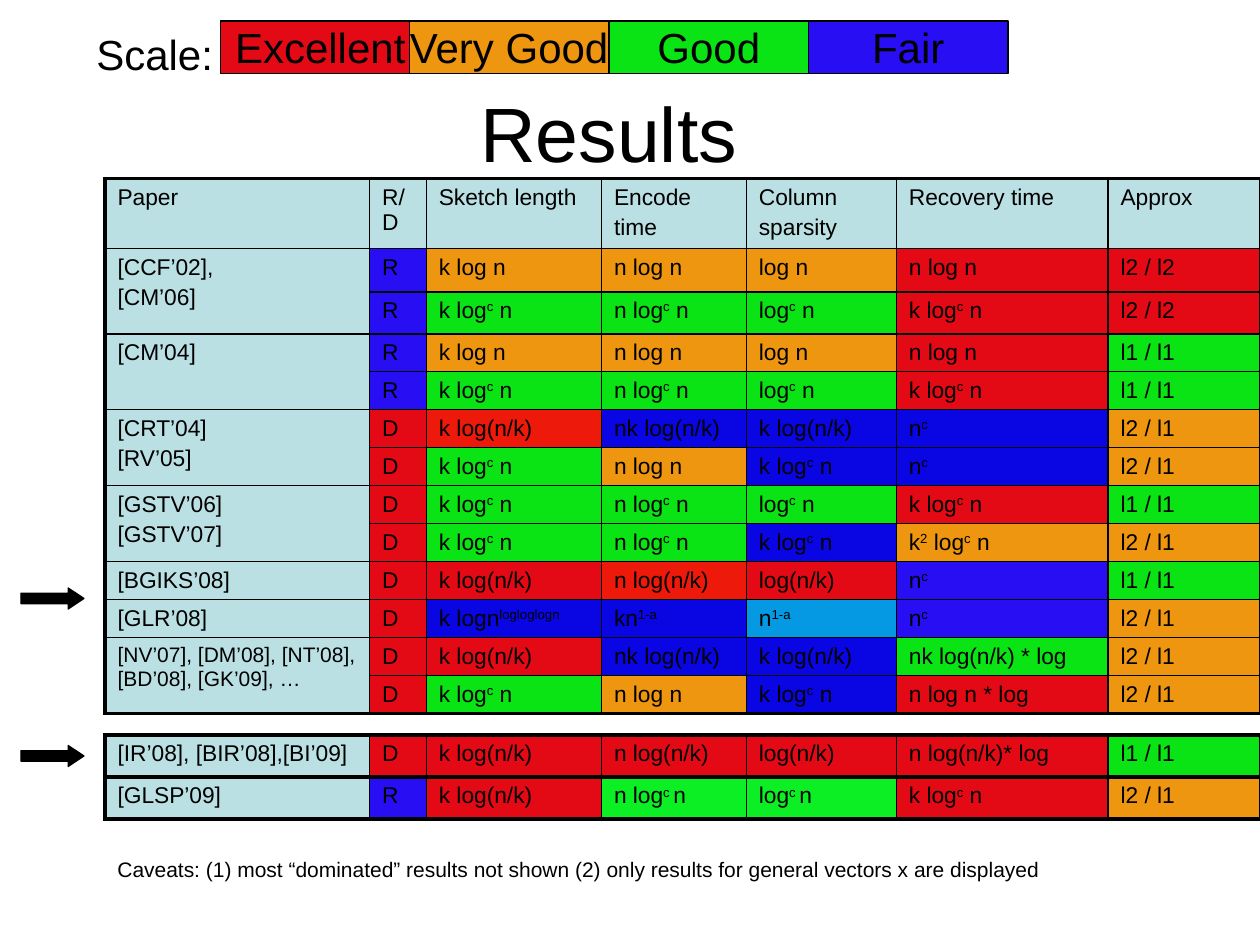
from lxml import etree
from pptx import Presentation
from pptx import util as u
from pptx.dml.color import RGBColor
from pptx.enum import shapes, text
from pptx.oxml import ns

Pt = u.Pt
COLORS = {
    "ink": "000000",
    "paper": "BBE0E3",
    "excellent": "E30A15",
    "scarlet": "ED190B",
    "very good": "EF9611",
    "good": "0AE314",
    "lime": "0BEF24",
    "fair": "280EF3",
    "navy": "0A06E3",
    "sky": "0699E3",
}
GRADES = {
    "P": "paper", "E": "excellent", "e": "scarlet", "V": "very good", "G": "good",
    "g": "lime", "F": "fair", "f": "navy", "s": "sky",
}
COLUMNS = [151.2, 32.4, 100.1, 82.8, 85.7, 121, 87.1]
KNOWN_HEIGHTS = [40, 24.8, 24] + [21.7] * 10
KNOWN_RESULTS = [
    ("PPPPPPP", "Paper|R/D|Sketch length|Encode\ntime|Column\nsparsity|Recovery time|Approx"),
    ("PFVVVEE", "[CCF’02],\n[CM’06]|R|k log n|n log n|log n|n log n|l2 / l2"),
    ("PFGGGEE", "|R|k log^c^ n|n log^c^ n|log^c^ n|k log^c^ n|l2 / l2"),
    ("PFVVVEG", "[CM’04]|R|k log n|n log n|log n|n log n|l1 / l1"),
    ("PFGGGEG", "|R|k log^c^ n|n log^c^ n|log^c^ n|k log^c^ n|l1 / l1"),
    ("PEefffV", "[CRT’04]\n[RV’05]|D|k log(n/k)|nk log(n/k)|k log(n/k)|n^c|l2 / l1"),
    ("PEGVffV", "|D|k log^c^ n|n log n|k log^c^ n|n^c|l2 / l1"),
    ("PEGGGEG", "[GSTV’06]\n[GSTV’07]|D|k log^c^ n|n log^c^ n|log^c^ n|k log^c^ n|l1 / l1"),
    ("PEGGfVV", "|D|k log^c^ n|n log^c^ n|k log^c^ n|k^2^ log^c^ n|l2 / l1"),
    ("PEEeEFG", "[BGIKS’08]|D|k log(n/k)|n log(n/k)|log(n/k)|n^c|l1 / l1"),
    ("PEffsFV", "[GLR’08]|D|k logn^logloglogn|kn^1-a|n^1-a|n^c|l2 / l1"),
    ("PEEffGV", "[NV’07], [DM’08], [NT’08], [BD’08], [GK’09], …|D|k log(n/k)|nk log(n/k)"
                "|k log(n/k)|nk log(n/k) * log|l2 / l1"),
    ("PEGVfEV", "|D|k log^c^ n|n log n|k log^c^ n|n log n * log|l2 / l1"),
]
SPARSE_RESULT = [
    ("PEEEEEG", "[IR’08], [BIR’08],[BI’09]|D|k log(n/k)|n log(n/k)|log(n/k)|n log(n/k)* log|l1 / l1"),
]
COMBINED_RESULT = [
    ("PFEggEV", "[GLSP’09]|R|k log(n/k)|n log^c ^n|log^c ^n|k log^c^ n|l2 / l1"),
]


def rgb(name):
    """Return the named colour."""
    return RGBColor.from_string(COLORS[name])


def write(paragraph, words, size, align=None):
    """Write words into a paragraph, raising the parts between carets."""
    for index, part in enumerate(words.split("^")):
        if part:
            run = paragraph.add_run()
            run.text = part
            if index % 2:
                run._r.get_or_add_rPr().set("baseline", "30000")
    if align is not None:
        paragraph.alignment = align
    for font in (paragraph.font, *(run.font for run in paragraph.runs)):
        font.name = "Arial"
        font.size = Pt(size)
        font.color.rgb = rgb("ink")


def add_border(cell, side, width):
    """Draw one edge of a table cell."""
    edge = etree.SubElement(cell._tc.get_or_add_tcPr(), ns.qn(f"a:ln{side}"), w=str(Pt(width)))
    fill = etree.SubElement(edge, ns.qn("a:solidFill"))
    etree.SubElement(fill, ns.qn("a:srgbClr"), val=COLORS["ink"])


def fill_cell(cell, grade, entry, edges):
    """Give a cell its borders, grade colour and lines of text."""
    for side, outer in edges.items():
        add_border(cell, side, 2.25 if outer else 1)
    cell.fill.solid()
    cell.fill.fore_color.rgb = rgb(GRADES[grade])
    cell.margin_top, cell.margin_bottom = Pt(3.6), Pt(3)
    size = 12 if len(entry) > 30 else 13
    for index, line in enumerate(entry.split("\n")):
        paragraph = cell.text_frame.add_paragraph() if index else cell.text_frame.paragraphs[0]
        paragraph.space_before = Pt(0.2 * size)
        write(paragraph, line, size)


def add_results(slide, left, top, results, heights):
    """Place a graded results table; a row without a paper joins the one above."""
    table = slide.shapes.add_table(
        len(results), len(COLUMNS), Pt(left), Pt(top), Pt(sum(COLUMNS)), Pt(sum(heights))
    ).table
    table.first_row = table.horz_banding = False
    for column, width in zip(table.columns, COLUMNS):
        column.width = Pt(width)
    for r, (grades, entries) in enumerate(results):
        table.rows[r].height = Pt(heights[r])
        for c, (grade, entry) in enumerate(zip(grades, entries.split("|"))):
            edges = {
                "L": c == 0, "R": c == len(COLUMNS) - 1,
                "T": r == 0, "B": r == len(results) - 1,
            }
            fill_cell(table.cell(r, c), grade, entry, edges)
            if not entry:
                add_border_below = len(results) - 1 == r
                table.cell(r - 1, c).merge(table.cell(r, c))
                if add_border_below:
                    edge = table.cell(r - 1, c)._tc.tcPr.find(ns.qn("a:lnB"))
                    edge.set("w", str(Pt(2.25)))


def add_label(slide, left, top, width, height, words, size):
    """Place a line of plain text."""
    label = slide.shapes.add_textbox(Pt(left), Pt(top), Pt(width), Pt(height))
    label.text_frame.word_wrap = True
    label.text_frame.auto_size = text.MSO_AUTO_SIZE.SHAPE_TO_FIT_TEXT
    write(label.text_frame.paragraphs[0], words, size)


def add_block(slide, kind, left, top, width, height, color):
    """Place a filled shape with a thin outline."""
    block = slide.shapes.add_shape(kind, Pt(left), Pt(top), Pt(width), Pt(height))
    block.shadow.inherit = False
    block.fill.solid()
    block.fill.fore_color.rgb = rgb(color)
    block.line.color.rgb = rgb("ink")
    block.line.width = Pt(0.75)
    return block


def add_scale(slide, left, top):
    """Place the grading scale with its caption."""
    add_label(slide, left, top + 1, 88, 36, "Scale:", 24)
    steps = {"Excellent": 78, "Very Good": 186, "Good": 300, "Fair": 414}
    for grade, offset in steps.items():
        block = add_block(
            slide, shapes.MSO_SHAPE.RECTANGLE, left + offset, top, 114, 30, grade.lower()
        )
        block.text_frame.word_wrap = False
        block.text_frame.vertical_anchor = text.MSO_ANCHOR.MIDDLE
        write(block.text_frame.paragraphs[0], grade, 24, text.PP_ALIGN.CENTER)


def add_heading(slide, left, top, width, height):
    """Move the title placeholder into its box and write the heading."""
    heading = slide.shapes.title
    heading.left, heading.top = Pt(left), Pt(top)
    heading.width, heading.height = Pt(width), Pt(height)
    heading.text_frame.vertical_anchor = text.MSO_ANCHOR.MIDDLE
    write(heading.text_frame.paragraphs[0], "Results ", 44, text.PP_ALIGN.CENTER)


def add_pointers(slide, left, tops):
    """Place an arrow at each highlighted row."""
    for top in tops:
        pointer = add_block(slide, shapes.MSO_SHAPE.RIGHT_ARROW, left, top, 36, 12, "ink")
        pointer.adjustments[0], pointer.adjustments[1] = 0.5, 0.75


def main():
    """Build the results slide."""
    deck = Presentation()
    deck.slide_width, deck.slide_height = Pt(720), Pt(540)
    slide = deck.slides.add_slide(deck.slide_layouts[5])
    add_heading(slide, 48, 30, 612, 90)
    add_results(slide, 60, 102, KNOWN_RESULTS, KNOWN_HEIGHTS)
    add_results(slide, 60, 420, SPARSE_RESULT, [24])
    add_scale(slide, 48, 12)
    add_pointers(slide, 12, [426, 336])
    add_results(slide, 60, 444, COMBINED_RESULT, [24])
    add_label(slide, 60, 486, 547, 21.6,
              "Caveats: (1) most “dominated” results not shown "
              "(2) only results for general vectors x are displayed", 12)
    deck.save("out.pptx")


if __name__ == "__main__":
    main()
